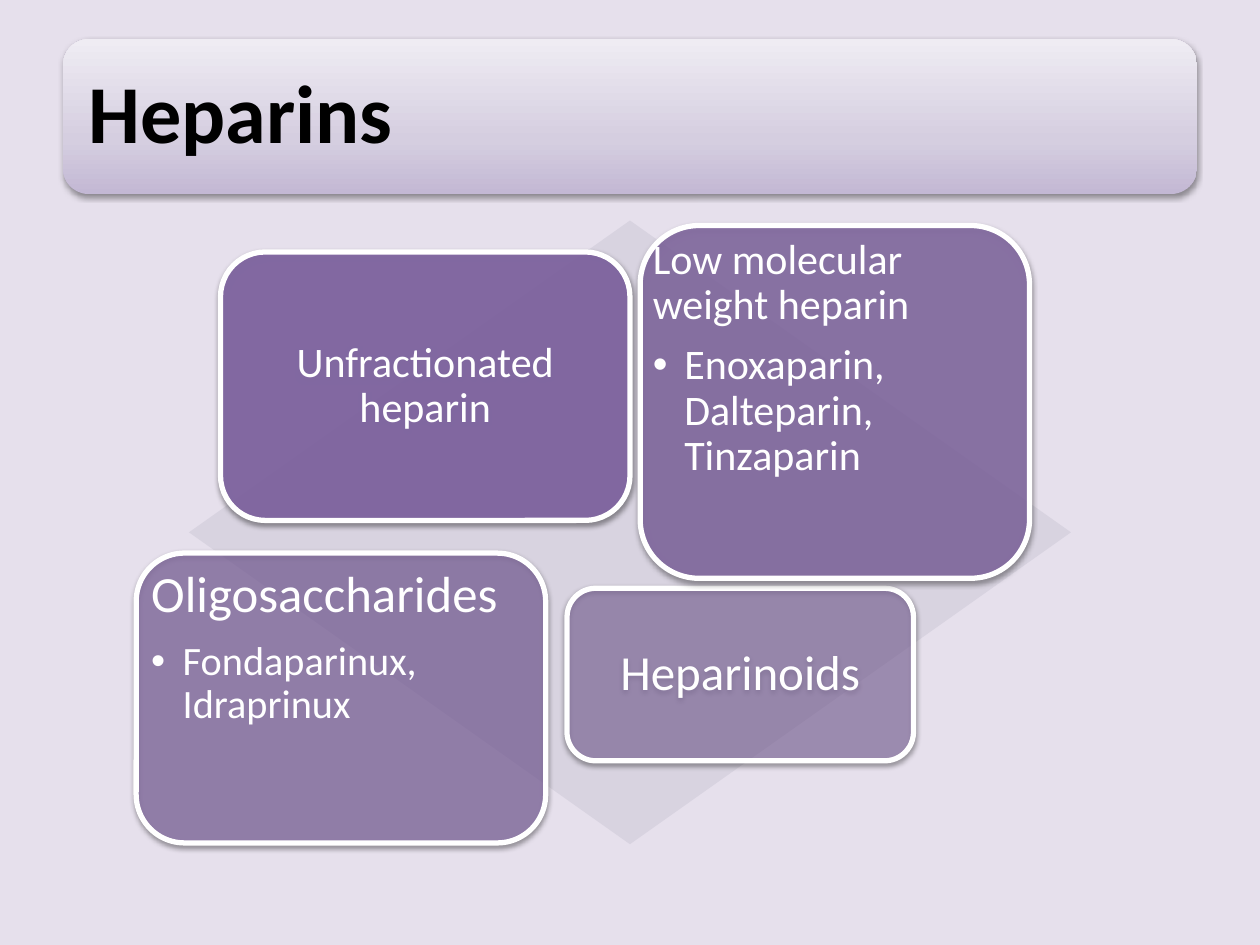
from copy import deepcopy

from lxml import etree
from pptx import Presentation
from pptx.dml.color import RGBColor
from pptx.enum.shapes import MSO_SHAPE
from pptx.enum.text import MSO_ANCHOR, MSO_AUTO_SIZE, PP_ALIGN
from pptx.oxml import parse_xml
from pptx.oxml.ns import nsdecls, qn
from pptx.util import Pt

ROUNDED, DIAMOND = MSO_SHAPE.ROUNDED_RECTANGLE, MSO_SHAPE.DIAMOND
TOP, MIDDLE = MSO_ANCHOR.TOP, MSO_ANCHOR.MIDDLE
LEFT, CENTER = PP_ALIGN.LEFT, PP_ALIGN.CENTER
NO_AUTOFIT = MSO_AUTO_SIZE.NONE

BANNER_STOPS = [(0, "C3B8D4"), (0.35, "D5CEE0"), (1, "EFECF3")]
BANNER_BOX = (36, 22.3, 648, 88.6)
DIAMOND_BOX = (108, 126, 504, 356.4)
CENTERED_CARDS = [
    ((126, 144, 234, 153.4), 90, "Unfractionated heparin", 24, 7.2),
    ((324, 336.2, 198, 98.6), 50, "Heparinoids", 28, 8.6),
]
LIST_CARDS = [
    ((365.8, 128.9, 222.5, 201.6), 77,
     ("Low molecular weight heparin", 24),
     ("Enoxaparin, Dalteparin, Tinzaparin", 24), 7.2),
    ((77.8, 316.1, 234, 165.6), 63,
     ("Oligosaccharides", 29), ("Fondaparinux, Idraprinux", 23), 8.6),
]


def color(value):
    """Turn a hex string into a colour."""
    return RGBColor.from_string(value)


def set_all(target, values):
    """Set every attribute in a dict of format values."""
    for name, value in values.items():
        setattr(target, name, value)


def place(shape, box):
    """Move a shape to a box given in points."""
    names = ("left", "top", "width", "height")
    set_all(shape, dict(zip(names, map(Pt, box))))


def add_panel(slide, kind, box):
    """Add a shape without a line or a shadow."""
    panel = slide.shapes.add_shape(kind, *map(Pt, box))
    panel.shadow.inherit = False
    panel.line.fill.background()
    return panel


def add_shadow(shape):
    """Give a shape a soft shadow that falls downwards."""
    effects = shape._element.spPr.find(qn("a:effectLst"))
    effects.append(parse_xml(
        f'<a:outerShdw {nsdecls("a")} blurRad="{Pt(3.1)}" dist="{Pt(1.6)}" '
        'dir="5400000" rotWithShape="0"><a:srgbClr val="000000">'
        '<a:alpha val="38000"/></a:srgbClr></a:outerShdw>'))


def format_frame(frame, inset, anchor):
    """Set wrapping, anchor and equal margins of a text frame."""
    sides = ("left", "right", "top", "bottom")
    set_all(frame, {"word_wrap": True, "auto_size": NO_AUTOFIT,
                    "vertical_anchor": anchor})
    set_all(frame, {f"margin_{side}": Pt(inset) for side in sides})


def write(paragraph, text, size, hue="FFFFFF", align=LEFT, after=0, bold=False):
    """Write one formatted paragraph."""
    paragraph.text = text
    set_all(paragraph, {"alignment": align, "line_spacing": 0.9,
                        "space_before": Pt(0), "space_after": Pt(after)})
    set_all(paragraph.font, {"name": "Calibri", "size": Pt(size), "bold": bold})
    paragraph.font.color.rgb = color(hue)


def set_bullet(paragraph, indent, character=None):
    """Set a hanging bullet, or none when no character is given."""
    properties = paragraph._p.get_or_add_pPr()
    properties.set("marL", str(Pt(indent)))
    properties.set("indent", str(-Pt(indent)))
    if character:
        etree.SubElement(properties, qn("a:buChar")).set("char", character)
    else:
        etree.SubElement(properties, qn("a:buNone"))


def add_banner(slide, box):
    """Build the gradient banner with the slide title on it."""
    banner = add_panel(slide, ROUNDED, box)
    add_shadow(banner)
    banner.fill.gradient()
    banner.fill.gradient_angle = 90
    stop_list = banner._element.spPr.find(qn("a:gradFill")).find(qn("a:gsLst"))
    stop_list.append(deepcopy(stop_list[0]))
    for stop, (position, hue) in zip(banner.fill.gradient_stops, BANNER_STOPS):
        stop.position = position
        stop.color.rgb = color(hue)
    title = slide.shapes.title
    place(title, box)
    banner._element.addnext(title._element)
    format_frame(title.text_frame, 14.4, MIDDLE)
    write(title.text_frame.paragraphs[0], "Heparins", 47, "000000", bold=True)


def add_diamond(slide, box):
    """Build the pale diamond behind the cards."""
    diamond = add_panel(slide, DIAMOND, box)
    diamond.fill.solid()
    diamond.fill.fore_color.rgb = color("D8D3E0")


def add_card(slide, box, opacity):
    """Build a translucent purple card with a white outline."""
    card = add_panel(slide, ROUNDED, box)
    add_shadow(card)
    card.fill.solid()
    card.fill.fore_color.rgb = color("8064A2")
    hue = card._element.spPr.find(qn("a:solidFill"))[0]
    etree.SubElement(hue, qn("a:alpha")).set("val", str(opacity * 1000))
    card.line.color.rgb = color("FFFFFF")
    card.line.width = Pt(3)
    return card


def add_centered_card(slide, box, opacity, text, size, inset):
    """Build a card with one centred label."""
    card = add_card(slide, box, opacity)
    format_frame(card.text_frame, inset, MIDDLE)
    write(card.text_frame.paragraphs[0], text, size, align=CENTER)


def add_list_card(slide, body, box, opacity, heading, item, inset):
    """Build a card whose body placeholder holds a heading and a bullet."""
    card = add_card(slide, box, opacity)
    place(body, box)
    card._element.addnext(body._element)
    frame = body.text_frame
    format_frame(frame, inset, TOP)
    first, second = frame.paragraphs[0], frame.add_paragraph()
    write(first, *heading, after=heading[1] * 0.35)
    set_bullet(first, 0)
    second.level = 1
    write(second, *item)
    set_bullet(second, 18, "•")


def main():
    """Build and save the presentation."""
    presentation = Presentation()
    set_all(presentation, {"slide_width": Pt(720), "slide_height": Pt(540)})
    slide = presentation.slides.add_slide(presentation.slide_layouts[3])
    slide.background.fill.solid()
    slide.background.fill.fore_color.rgb = color("E6E0EC")
    bodies = [slide.placeholders[1], slide.placeholders[2]]
    add_banner(slide, BANNER_BOX)
    add_diamond(slide, DIAMOND_BOX)
    for card in CENTERED_CARDS:
        add_centered_card(slide, *card)
    for body, card in zip(bodies, LIST_CARDS):
        add_list_card(slide, body, *card)
    presentation.save("out.pptx")


if __name__ == "__main__":
    main()
